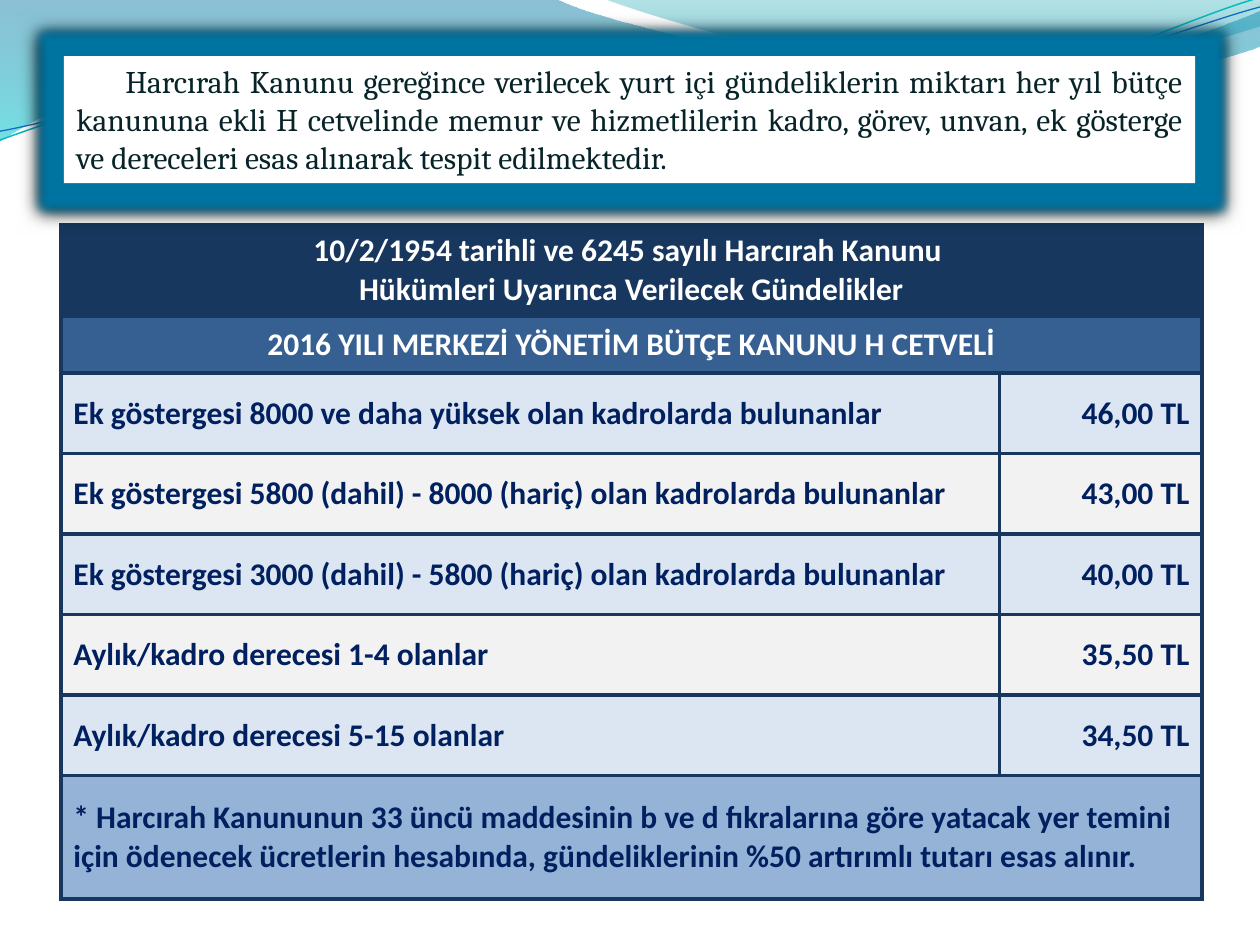
from itertools import chain, islice

from lxml.etree import SubElement
from pptx import Presentation
from pptx.dml.color import RGBColor
from pptx.enum.shapes import MSO_SHAPE
from pptx.enum.text import MSO_ANCHOR, MSO_AUTO_SIZE, PP_ALIGN
from pptx.oxml import parse_xml
from pptx.oxml.ns import nsdecls, qn
from pptx.util import Pt

WHITE = RGBColor(0xFF, 0xFF, 0xFF)
INK = RGBColor(0x07, 0x24, 0x28)
NAVY = RGBColor(0x17, 0x37, 0x5E)
STEEL = RGBColor(0x37, 0x60, 0x92)
DARK_BLUE = RGBColor(0x00, 0x20, 0x60)
PALE_BLUE = RGBColor(0xDC, 0xE6, 0xF2)
PALE_GREY = RGBColor(0xF2, 0xF2, 0xF2)
NOTE_BLUE = RGBColor(0x95, 0xB3, 0xD7)
GLOW = RGBColor(0x00, 0x74, 0xA1)
AQUA = RGBColor(0x00, 0xC6, 0xCF)
TEAL = RGBColor(0x00, 0xA1, 0xA9)
AZURE = RGBColor(0x00, 0x8B, 0xBF)
TEAL_LINE = RGBColor(0x0A, 0xB8, 0xBF)
BLUE_LINE = RGBColor(0x0F, 0x6F, 0xC6)

BANDS = [
    ((0, 0), [[(317, -1)], [(343, 12), (478, 45), (546, 45)],
              [(614, 45), (690, 19), (720, 6)], [(721, 26)],
              [(708, 32), (626, 55), (537, 54)], [(448, 54), (275, 20), (185, 24)],
              [(93, 26), (33, 60), (-1, 81)]],
     [(0, GLOW, 45), (1, AQUA, 55)]),
    ((345, -1), [[(366, 8), (491, 45), (554, 47)], [(617, 50), (692, 23), (720, 15)],
                 [(720, 0)]],
     [(0, TEAL, 30), (0.8, AZURE, 45)]),
]
STRANDS = [
    ((-1.4, 63.1), [[(34.1, 51.7), (114.3, 29.4), (199.4, 29.5)],
                    [(284.4, 30.5), (425.9, 67.2), (512, 65.2)],
                    [(599.3, 62.3), (676.1, 25.9), (720.6, 15.9)]], TEAL_LINE, 0.85),
    ((-1.1, 58), [[(33.1, 53.6), (118.2, 32.6), (204.3, 32.7)],
                  [(290.3, 33.7), (429.1, 63.3), (515.3, 61.4)],
                  [(601.5, 59.4), (679, 30), (721.4, 21)]], BLUE_LINE, 0.75),
]
STRAND_TILT = 357.3

INTRO = ("Harcırah Kanunu gereğince verilecek yurt içi gündeliklerin miktarı her yıl "
         "bütçe kanununa ekli H cetvelinde memur ve hizmetlilerin kadro, görev, unvan, "
         "ek gösterge ve dereceleri esas alınarak tespit edilmektedir.")
HEADING = ["10/2/1954 tarihli ve 6245 sayılı Harcırah Kanunu ",
           "Hükümleri Uyarınca Verilecek Gündelikler"]
SUBHEADING = "2016 YILI MERKEZİ YÖNETİM BÜTÇE KANUNU H CETVELİ"
ALLOWANCES = [
    ("Ek göstergesi 8000 ve daha yüksek olan kadrolarda bulunanlar", "46,00 TL"),
    ("Ek göstergesi 5800 (dahil) - 8000 (hariç) olan kadrolarda bulunanlar", "43,00 TL"),
    ("Ek göstergesi 3000 (dahil) - 5800 (hariç) olan kadrolarda bulunanlar", "40,00 TL"),
    ("Aylık/kadro derecesi 1-4 olanlar", "35,50 TL"),
    ("Aylık/kadro derecesi 5-15 olanlar", "34,50 TL"),
]
NOTE = ("* Harcırah Kanununun 33 üncü maddesinin b ve d fıkralarına göre yatacak yer "
        "temini için ödenecek ücretlerin hesabında, gündeliklerinin %50 artırımlı "
        "tutarı esas alınır.")
COLUMN_WIDTHS = [536.4, 115.8]
ROW_HEIGHTS = [52.5, 32.5] + [46] * len(ALLOWANCES) + [70.5]


def add_wave(slide, start, segments, close):
    """Add an outline of straight and cubic segments without shadow."""
    builder = slide.shapes.build_freeform(Pt(start[0]), Pt(start[1]))
    points = [(Pt(x), Pt(y)) for x, y in chain.from_iterable(segments)]
    builder.add_line_segments(points, close=close)
    wave = builder.convert_to_shape()
    wave.shadow.inherit = False
    outline = next(wave._element.iter(qn("a:path")))
    vertices = iter(outline.findall(qn("a:lnTo")))
    for segment in segments:
        group = list(islice(vertices, len(segment)))
        if len(group) == 3:
            curve = SubElement(outline, qn("a:cubicBezTo"))
            group[0].addprevious(curve)
            for vertex in group:
                curve.append(vertex[0])
                outline.remove(vertex)
    return wave


def add_band(slide, start, segments, stops):
    """Add a translucent band that fades from top to bottom."""
    band = add_wave(slide, start, segments, True)
    band.line.fill.background()
    band.fill.gradient()
    band.fill.gradient_angle = 270
    for stop, (position, color, _) in zip(band.fill.gradient_stops, stops):
        stop.position = position
        stop.color.rgb = color
    tints = band._element.spPr.find(qn("a:gradFill")).iter(qn("a:srgbClr"))
    for tint, (_, _, opacity) in zip(tints, stops):
        SubElement(tint, qn("a:alpha")).set("val", str(opacity * 1000))


def add_strand(slide, start, segments, color, width):
    """Add a thin, slightly tilted curved line."""
    strand = add_wave(slide, start, segments, False)
    strand.rotation = STRAND_TILT
    strand.fill.background()
    strand.line.color.rgb = color
    strand.line.width = Pt(width)


def add_run(paragraph, text, font_name, color, bold=False):
    """Add one formatted run."""
    run = paragraph.add_run()
    run.text = text
    run.font.name = font_name
    run.font.size = Pt(18)
    run.font.bold = bold
    run.font.color.rgb = color


def add_intro(slide):
    """Add the white introduction panel with its glow."""
    panel = slide.shapes.add_shape(MSO_SHAPE.RECTANGLE, Pt(36.5), Pt(32), Pt(646.5), Pt(72.7))
    panel.fill.solid()
    panel.fill.fore_color.rgb = WHITE
    panel.line.fill.background()
    panel._element.spPr.append(parse_xml(
        f'<a:effectLst {nsdecls("a")}>'
        f'<a:glow rad="{Pt(10)}"><a:srgbClr val="{GLOW}"/></a:glow>'
        f'<a:outerShdw blurRad="{Pt(8.5)}" dist="{Pt(1)}" dir="5400000" rotWithShape="0">'
        '<a:srgbClr val="000000"/></a:outerShdw></a:effectLst>'))
    frame = panel.text_frame
    frame.word_wrap = True
    frame.auto_size = MSO_AUTO_SIZE.SHAPE_TO_FIT_TEXT
    frame.vertical_anchor = MSO_ANCHOR.TOP
    paragraph = frame.paragraphs[0]
    paragraph.alignment = PP_ALIGN.JUSTIFY
    paragraph._p.get_or_add_pPr().set("indent", str(Pt(28)))
    add_run(paragraph, INTRO, "Cambria", INK)


def style_cell(cell, fill):
    """Fill a cell and draw its four borders."""
    cell.fill.solid()
    cell.fill.fore_color.rgb = fill
    cell.vertical_anchor = MSO_ANCHOR.MIDDLE
    for index, side in enumerate(("lnL", "lnR", "lnT", "lnB")):
        cell._tc.tcPr.insert(index, parse_xml(
            f'<a:{side} {nsdecls("a")} w="{Pt(2.25)}"><a:solidFill>'
            f'<a:srgbClr val="{NAVY}"/></a:solidFill></a:{side}>'))


def write_cell(cell, lines, color, alignment):
    """Write bold lines into a cell."""
    paragraph = cell.text_frame.paragraphs[0]
    paragraph.alignment = alignment
    for index, line in enumerate(lines):
        if index:
            paragraph.add_line_break()
        add_run(paragraph, line, "Calibri", color, True)


def add_allowance_table(slide):
    """Add the table of daily allowances."""
    table = slide.shapes.add_table(
        len(ROW_HEIGHTS), len(COLUMN_WIDTHS), Pt(34.75), Pt(128.25),
        Pt(sum(COLUMN_WIDTHS)), Pt(sum(ROW_HEIGHTS))).table
    table.first_row = table.horz_banding = False
    for column, width in zip(table.columns, COLUMN_WIDTHS):
        column.width = Pt(width)
    stripes = [(PALE_BLUE, PALE_GREY)[i % 2] for i in range(len(ALLOWANCES))]
    fills = [NAVY, STEEL, *stripes, NOTE_BLUE]
    for row, height, fill in zip(table.rows, ROW_HEIGHTS, fills):
        row.height = Pt(height)
        for cell in row.cells:
            style_cell(cell, fill)
    last = len(ROW_HEIGHTS) - 1
    for index, lines, color, alignment in (
            (0, HEADING, WHITE, PP_ALIGN.CENTER),
            (1, [SUBHEADING], WHITE, PP_ALIGN.CENTER),
            (last, [NOTE], DARK_BLUE, PP_ALIGN.LEFT)):
        table.cell(index, 0).merge(table.cell(index, 1))
        write_cell(table.cell(index, 0), lines, color, alignment)
    for index, (group, amount) in enumerate(ALLOWANCES, start=2):
        write_cell(table.cell(index, 0), [group], DARK_BLUE, PP_ALIGN.LEFT)
        write_cell(table.cell(index, 1), [amount], DARK_BLUE, PP_ALIGN.RIGHT)


def main():
    """Build the allowance slide."""
    deck = Presentation()
    deck.slide_width, deck.slide_height = Pt(720), Pt(540)
    slide = deck.slides.add_slide(deck.slide_layouts[6])
    for band in BANDS:
        add_band(slide, *band)
    for strand in STRANDS:
        add_strand(slide, *strand)
    add_allowance_table(slide)
    add_intro(slide)
    deck.save("out.pptx")


if __name__ == "__main__":
    main()
